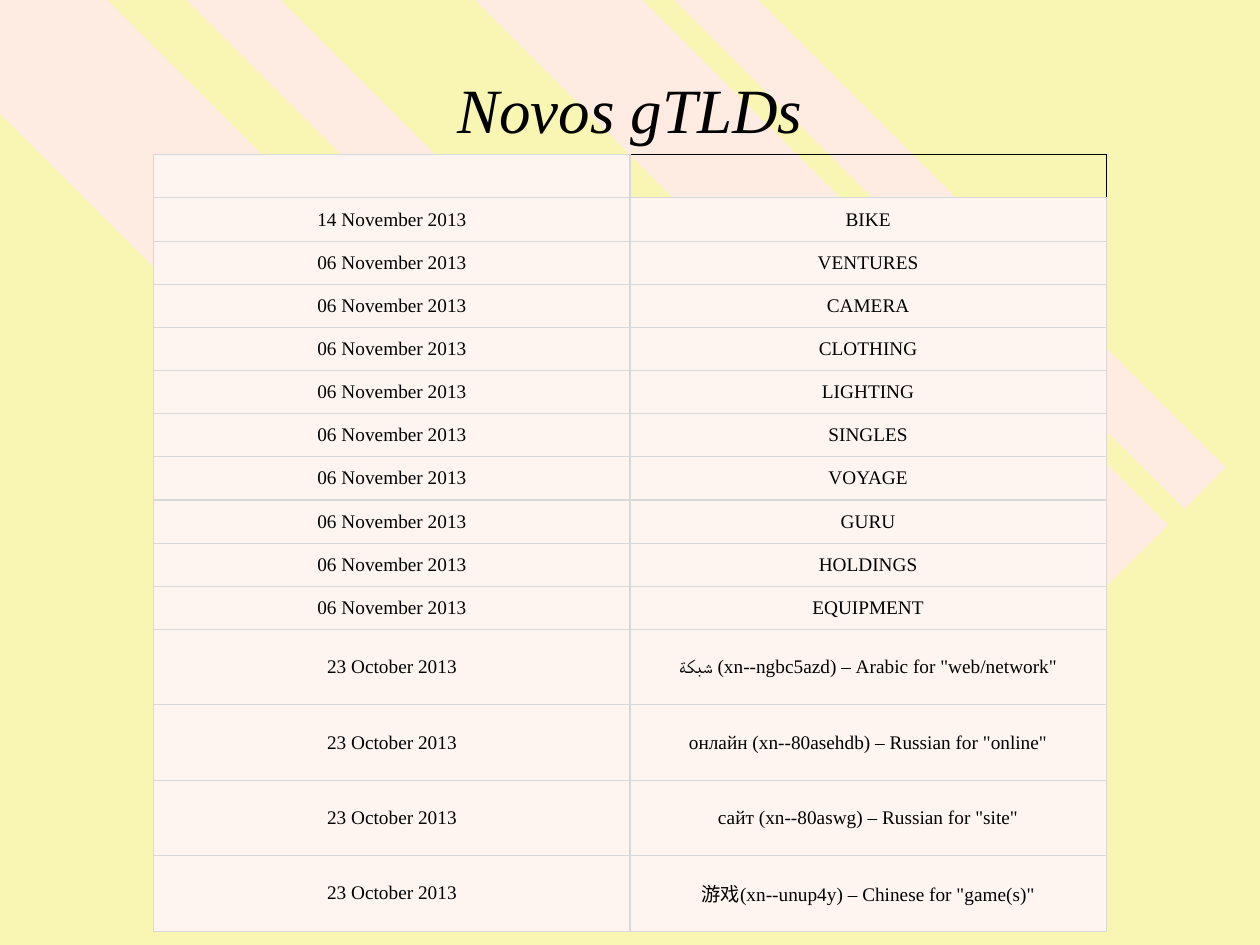
from dataclasses import dataclass

from lxml import etree
from pptx import Presentation
from pptx import util as u
from pptx.dml.color import RGBColor
from pptx.enum import text
from pptx.oxml import ns


@dataclass(frozen=True)
class Theme:
    background: str = "F8F6B2"
    stripe: str = "FEECE2"
    cell: str = "FEF5F1"
    border: str = "D8D8D8"
    ink: str = "000000"
    font: str = "Times New Roman"
    title_size: int = 36
    table_size: int = 11


THEME = Theme()

# Corner points in centimetres
STRIPES = [
    [(18.16, 15.98), (2.16, 0), (0, 0), (0, 2.29), (15.93, 18.21)],
    [(5.66, 0), (19.89, 14.22), (18.95, 15.19), (3.76, 0)],
    [(12.95, 0), (23.55, 10.59), (21.84, 12.27), (9.58, 0)],
    [(13.59, 0), (23.88, 10.26), (24.71, 9.42), (15.29, 0)],
]

NOVEMBER_NAMES = ["VENTURES", "CAMERA", "CLOTHING", "LIGHTING", "SINGLES",
                  "VOYAGE", "GURU", "HOLDINGS", "EQUIPMENT"]
OCTOBER_NAMES = [
    'شبكة (xn--ngbc5azd) – Arabic for "web/network"',
    'онлайн (xn--80asehdb) – Russian for "online"',
    'сайт (xn--80aswg) – Russian for "site"',
    '游戏(xn--unup4y) – Chinese for "game(s)"',
]
ROWS = ([("", ""), ("14 November 2013", "BIKE")]
        + [("06 November 2013", name) for name in NOVEMBER_NAMES]
        + [("23 October 2013", name) for name in OCTOBER_NAMES])


def color(value):
    return RGBColor.from_string(value)


def style_paragraph(paragraph, size, italic=False):
    paragraph.alignment = text.PP_ALIGN.CENTER
    for run in paragraph.runs:
        run.font.name = THEME.font
        run.font.size = u.Pt(size)
        run.font.italic = italic
        run.font.color.rgb = color(THEME.ink)


def add_stripes(slide, left, top):
    for first, *rest in STRIPES:
        points = [(x * 100, y * 100) for x, y in rest]
        builder = slide.shapes.build_freeform(
            first[0] * 100, first[1] * 100, scale=u.Cm(1) / 100)
        builder.add_line_segments(points, close=True)
        stripe = builder.convert_to_shape(left, top)
        stripe.shadow.inherit = False
        stripe.fill.solid()
        stripe.fill.fore_color.rgb = color(THEME.stripe)
        stripe.line.fill.background()


def add_title(slide, left, top, width, height):
    frame = slide.shapes.add_textbox(left, top, width, height).text_frame
    frame.word_wrap = True
    frame.vertical_anchor = text.MSO_ANCHOR.MIDDLE
    frame.text = "Novos gTLDs"
    frame.paragraphs[0].line_spacing = 0.89
    style_paragraph(frame.paragraphs[0], THEME.title_size, italic=True)


def set_borders(cell, colors):
    """Draw the left, right, top and bottom borders in the given colours."""
    properties = cell._tc.get_or_add_tcPr()
    for side, value in zip("LRTB", colors):
        line = etree.SubElement(properties, ns.qn(f"a:ln{side}"), w=str(u.Pt(0.75)))
        fill = etree.SubElement(line, ns.qn("a:solidFill"))
        etree.SubElement(fill, ns.qn("a:srgbClr"), val=value)


def add_domain_table(slide, left, top, width, row_height, tall_height):
    heights = [row_height] * (len(ROWS) - len(OCTOBER_NAMES))
    heights += [tall_height] * len(OCTOBER_NAMES)
    table = slide.shapes.add_table(
        len(ROWS), 2, left, top, width, sum(heights)).table
    table.first_row = table.horz_banding = False
    for row, height, values in zip(table.rows, heights, ROWS):
        row.height = height
        for cell, value in zip(row.cells, values):
            cell.text = value
            cell.vertical_anchor = text.MSO_ANCHOR.MIDDLE
            cell.margin_left = cell.margin_right = u.Cm(0.15)
            cell.margin_top = cell.margin_bottom = u.Cm(0.05)
            style_paragraph(cell.text_frame.paragraphs[0], THEME.table_size)
            open_header = cell is not None and row is not None and False
            set_borders(cell, [THEME.border] * 4)
            cell.fill.solid()
            cell.fill.fore_color.rgb = color(THEME.cell)
    return table


def clear_header_cell(cell):
    """Leave the cell unfilled, with dark top and right borders."""
    cell.fill.background()
    properties = cell._tc.tcPr
    for side in "RT":
        properties.find(f"{ns.qn(f'a:ln{side}')}//{ns.qn('a:srgbClr')}").set("val", THEME.ink)


def main():
    presentation = Presentation()
    presentation.slide_width, presentation.slide_height = u.Cm(25.4), u.Cm(19.05)
    slide = presentation.slides.add_slide(presentation.slide_layouts[6])
    slide.background.fill.solid()
    slide.background.fill.fore_color.rgb = color(THEME.background)
    add_stripes(slide, 0, 0)
    add_title(slide, u.Cm(2.75), u.Cm(0.69), u.Cm(19.9), u.Cm(3.18))
    table = add_domain_table(
        slide, u.Cm(3.1), u.Cm(3.12), u.Cm(19.2), u.Cm(0.87), u.Cm(1.52))
    clear_header_cell(table.cell(0, 1))
    presentation.save("out.pptx")


if __name__ == "__main__":
    main()
